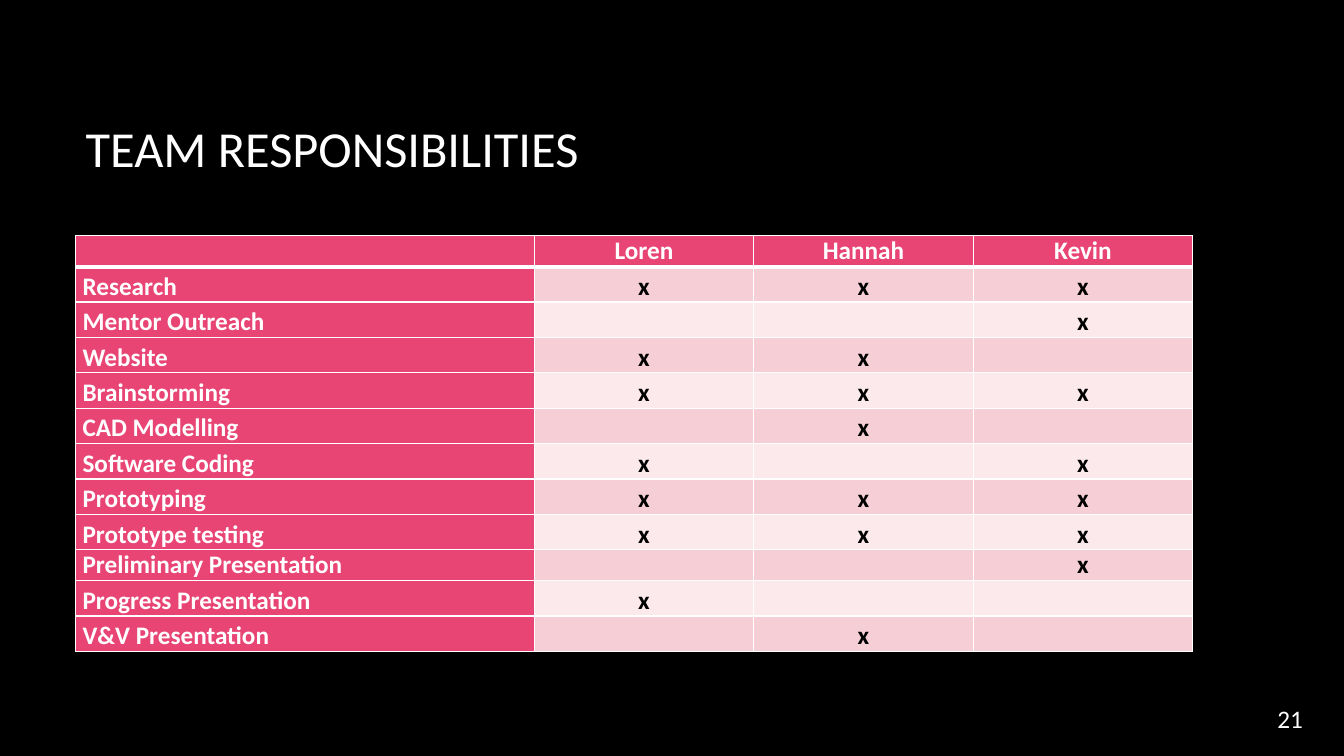
from lxml.etree import SubElement
from pptx import Presentation
from pptx.dml.color import RGBColor
from pptx.enum.text import MSO_ANCHOR as ANCHOR, PP_ALIGN as ALIGN
from pptx.oxml.ns import qn
from pptx.util import Pt

BLACK = RGBColor(0x00, 0x00, 0x00)
WHITE = RGBColor(0xFF, 0xFF, 0xFF)
PINK = RGBColor(0xE8, 0x45, 0x74)
BANDS = [RGBColor(0xF6, 0xCF, 0xD6), RGBColor(0xFB, 0xE9, 0xEB)]

MEMBERS = ["Loren", "Hannah", "Kevin"]
TASKS = [
    ("Research", MEMBERS),
    ("Mentor Outreach", ["Kevin"]),
    ("Website", ["Loren", "Hannah"]),
    ("Brainstorming", MEMBERS),
    ("CAD Modelling", ["Hannah"]),
    ("Software Coding", ["Loren", "Kevin"]),
    ("Prototyping", MEMBERS),
    ("Prototype testing", MEMBERS),
    ("Preliminary Presentation", ["Kevin"]),
    ("Progress Presentation", ["Loren"]),
    ("V&V Presentation", ["Hannah"]),
]


def write(tf, text, size=18, color=WHITE, bold=False, align=ALIGN.CENTER, spacing=None):
    p = tf.paragraphs[0]
    p.alignment = align
    p.line_spacing = spacing
    p.font.size = Pt(size)
    if text:
        r = p.add_run()
        r.text = text
        r.font.name = "Calibri"
        r.font.size = Pt(size)
        r.font.bold = bold
        r.font.color.rgb = color


def set_borders(cell, bottom):
    tcPr = cell._tc.get_or_add_tcPr()
    for i, (side, width) in enumerate([("L", 1), ("R", 1), ("T", 1), ("B", bottom)]):
        ln = SubElement(tcPr, qn(f"a:ln{side}"), w=str(Pt(width)))
        SubElement(SubElement(ln, qn("a:solidFill")), qn("a:srgbClr"), val=str(WHITE))
        tcPr.insert(i, ln)


prs = Presentation()
prs.slide_width, prs.slide_height = Pt(960), Pt(540)
s = prs.slides.add_slide(prs.slide_layouts[5])
s.background.fill.solid()
s.background.fill.fore_color.rgb = BLACK

title = s.shapes.title
title.left, title.top, title.width, title.height = Pt(54), Pt(48), Pt(798), Pt(114.5)
title.text_frame.vertical_anchor = ANCHOR.MIDDLE
write(title.text_frame, "TEAM RESPONSIBILITIES", size=36, align=ALIGN.LEFT)

rows = [["", *MEMBERS]]
rows += [[task, *("x" if m in owners else "" for m in MEMBERS)] for task, owners in TASKS]
table = s.shapes.add_table(len(rows), 4, Pt(54), Pt(168.5), Pt(798), Pt(297)).table
for col, width in zip(table.columns, [327.6, 156.8, 156.8, 156.8]):
    col.width = Pt(width)

for i, row in enumerate(rows):
    compact = row[0] in ("", "Preliminary Presentation")
    table.rows[i].height = Pt(22 if compact else 25.3)
    for j, text in enumerate(row):
        cell = table.cell(i, j)
        heading = i == 0 or j == 0
        cell.margin_left = cell.margin_right = Pt(5)
        cell.margin_top = cell.margin_bottom = 0
        cell.fill.solid()
        cell.fill.fore_color.rgb = PINK if heading else BANDS[(i - 1) % 2]
        set_borders(cell, bottom=3 if i == 0 else 1)
        write(cell.text_frame, text, color=WHITE if heading else BLACK, bold=True,
              align=ALIGN.CENTER if j else ALIGN.LEFT,
              spacing=1.15 if text and not compact else None)

number = s.shapes.add_textbox(Pt(813.6), Pt(499), Pt(216), Pt(29))
number.text_frame.word_wrap = True
write(number.text_frame, "21")

prs.save("out.pptx")
